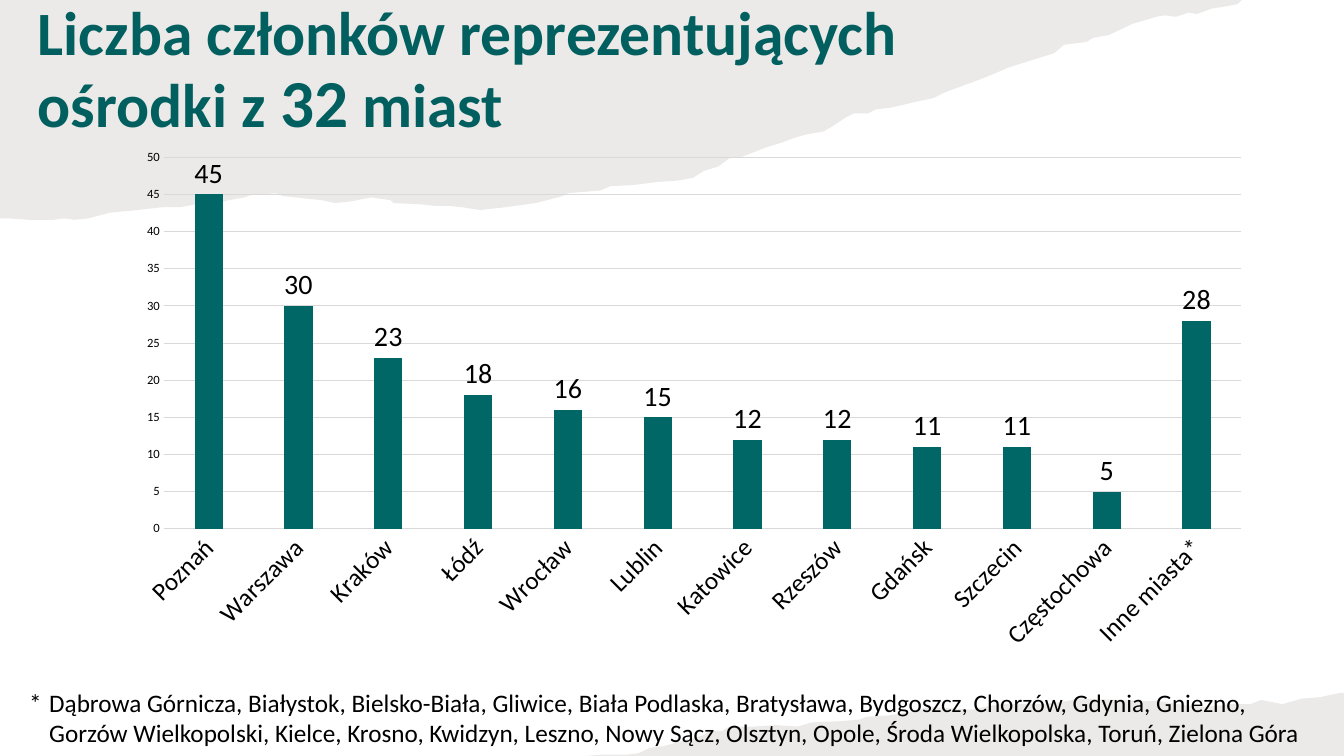
from dataclasses import dataclass

from lxml import etree
from pptx import Presentation
from pptx import util as u
from pptx.chart.data import CategoryChartData
from pptx.dml.color import RGBColor
from pptx.enum import chart as ch
from pptx.enum import text
from pptx.oxml import parse_xml
from pptx.oxml.ns import nsdecls, qn

TITLE_TEAL = RGBColor(0x01, 0x5F, 0x5F)
BAR_TEAL = RGBColor(0x00, 0x66, 0x66)
BLACK = RGBColor(0, 0, 0)
GRID_GREY = RGBColor(0xD9, 0xD9, 0xD9)
PAPER = RGBColor(0x82, 0x76, 0x6A)
FONT = "Calibri"
PAPER_OPACITY = 15  # per cent

MEMBERS = {
    "Poznań": 45, "Warszawa": 30, "Kraków": 23, "Łódź": 18,
    "Wrocław": 16, "Lublin": 15, "Katowice": 12, "Rzeszów": 12,
    "Gdańsk": 11, "Szczecin": 11, "Częstochowa": 5, "Inne miasta*": 28,
}
OTHER_CITIES = (
    "*\tDąbrowa Górnicza, Białystok, Bielsko-Biała, Gliwice, Biała Podlaska, "
    "Bratysława, Bydgoszcz, Chorzów, Gdynia, Gniezno, Gorzów Wielkopolski, "
    "Kielce, Krosno, Kwidzyn, Leszno, Nowy Sącz, Olsztyn, Opole, "
    "Środa Wielkopolska, Toruń, Zielona Góra"
)


@dataclass(frozen=True)
class Box:
    left: float
    top: float
    width: float
    height: float

    def lengths(self) -> list[u.Length]:
        return [u.Pt(v) for v in (self.left, self.top, self.width, self.height)]


@dataclass(frozen=True)
class TornPaper:
    """A sheet with straight corners and one ragged edge, as (x, y) points."""
    corners: list[tuple[float, float]]
    edge: list[tuple[float, float]]


TOP_PAPER = TornPaper([(0, 0)], [
    (887, 0), (884, 3), (873, 5), (866, 6), (855, 10), (849, 9), (840, 12),
    (832, 11), (826, 12), (809, 17), (792, 25), (781, 27), (776, 30),
    (760, 32), (753, 38), (721, 48), (714, 51), (702, 56), (683, 63),
    (675, 66), (667, 70), (653, 73), (636, 77), (626, 78), (620, 81),
    (610, 81), (604, 84), (595, 90), (588, 94), (576, 96), (566, 99),
    (558, 102), (548, 105), (530, 112), (521, 113), (513, 119), (503, 122),
    (495, 127), (484, 129), (469, 130), (454, 132), (436, 133), (429, 136),
    (406, 138), (402, 140), (383, 145), (361, 148), (343, 150), (330, 148),
    (320, 147), (310, 147), (301, 146), (281, 145), (279, 143), (265, 141),
    (250, 144), (239, 145), (230, 143), (220, 142), (202, 140), (197, 138),
    (187, 139), (180, 139), (175, 141), (163, 143), (153, 146), (145, 145),
    (129, 148), (116, 148), (98, 150), (78, 152), (63, 156), (53, 157),
    (46, 156), (38, 157), (21, 157), (7, 156), (0, 156),
])
BOTTOM_PAPER = TornPaper([(960, 495), (960, 540)], [
    (418, 540), (431, 539), (448, 539), (456, 538), (465, 534), (474, 533),
    (485, 530), (503, 525), (507, 522), (516, 522), (521, 519), (538, 519),
    (554, 518), (570, 519), (580, 516), (603, 515), (614, 514), (619, 512),
    (635, 511), (649, 509), (655, 507), (664, 505), (694, 507), (703, 505),
    (715, 503), (734, 503), (744, 503), (755, 502), (772, 499), (799, 500),
    (829, 501), (848, 504), (862, 505), (871, 504), (878, 503), (893, 503),
    (901, 500), (916, 503), (930, 499), (943, 498), (957, 495),
])


def add_torn_paper(s, paper: TornPaper) -> None:
    start, *rest = [(u.Pt(x), u.Pt(y)) for x, y in paper.corners + paper.edge]
    builder = s.shapes.build_freeform(*start)
    builder.add_line_segments(rest, close=True)
    sp = builder.convert_to_shape()
    sp.shadow.inherit = False
    sp.line.fill.background()
    sp.fill.solid()
    sp.fill.fore_color.rgb = PAPER
    colour = sp.fill._xPr.find(qn("a:solidFill"))[0]
    etree.SubElement(colour, qn("a:alpha"), val=str(PAPER_OPACITY * 1000))


def style_font(font, size: float, color: RGBColor = BLACK, bold: bool = False) -> None:
    font.name = FONT
    font.size = u.Pt(size)
    font.color.rgb = color
    font.bold = bold


def add_text(s, box: Box, runs: list[tuple[str, float]], *, color: RGBColor = BLACK,
             bold: bool = False, anchor=text.MSO_ANCHOR.TOP, line_spacing: float = 1.0,
             space_before: float = 0, hanging: float = 0, right_inset: float = 7.2) -> None:
    """Add one paragraph made of (text, size) runs."""
    tf = s.shapes.add_textbox(*box.lengths()).text_frame
    tf.word_wrap = True
    tf.vertical_anchor = anchor
    tf.margin_right = u.Pt(right_inset)
    p = tf.paragraphs[0]
    p.line_spacing = line_spacing
    p.space_before = u.Pt(space_before)
    if hanging:
        p_pr = p._p.get_or_add_pPr()
        p_pr.set("marL", str(u.Pt(hanging)))
        p_pr.set("indent", str(-u.Pt(hanging)))
    for content, size in runs:
        r = p.add_run()
        r.text = content
        style_font(r.font, size, color, bold)


def set_plot_area(chart, x: float, y: float, w: float, h: float) -> None:
    """Fix the inner plot area as fractions of the chart."""
    plot_area = chart._chartSpace.chart.plotArea
    for old in plot_area.findall(qn("c:layout")):
        plot_area.remove(old)
    parts = "".join(f'<c:{tag} val="{val}"/>' for tag, val in (
        ("layoutTarget", "inner"), ("xMode", "edge"), ("yMode", "edge"),
        ("x", x), ("y", y), ("w", w), ("h", h)))
    plot_area.insert(0, parse_xml(
        f'<c:layout {nsdecls("c")}><c:manualLayout>{parts}</c:manualLayout></c:layout>'))


def style_line(line) -> None:
    line.color.rgb = GRID_GREY
    line.width = u.Pt(0.75)


def add_member_chart(s, box: Box) -> None:
    data = CategoryChartData()
    data.categories = list(MEMBERS)
    data.add_series("Series 1", list(MEMBERS.values()))
    chart = s.shapes.add_chart(
        ch.XL_CHART_TYPE.COLUMN_CLUSTERED, *box.lengths(), data).chart
    chart.has_legend = False
    chart.has_title = False
    style_font(chart.font, 10)
    set_plot_area(chart, 0.078, 0.017, 0.903, 0.699)

    cities, counts = chart.category_axis, chart.value_axis
    for axis, size in ((cities, 18), (counts, 9)):
        style_font(axis.tick_labels.font, size)
        axis.major_tick_mark = axis.minor_tick_mark = ch.XL_TICK_MARK.NONE
    style_line(cities.format.line)
    cities._element.find(qn("c:txPr")).find(qn("a:bodyPr")).set("rot", str(-45 * 60000))
    counts.format.line.fill.background()
    counts.minimum_scale, counts.maximum_scale, counts.major_unit = 0, 50, 5
    counts.has_major_gridlines = True
    style_line(counts.major_gridlines.format.line)

    plot = chart.plots[0]
    plot.gap_width, plot.overlap = 219, -27
    plot.vary_by_categories = False
    bars = plot.series[0]
    bars.format.fill.solid()
    bars.format.fill.fore_color.rgb = BAR_TEAL
    labels = bars.data_labels
    labels.show_value = True
    labels.position = ch.XL_LABEL_POSITION.OUTSIDE_END
    style_font(labels.font, 20)


def main() -> None:
    prs = Presentation()
    prs.slide_width, prs.slide_height = u.Pt(960), u.Pt(540)
    s = prs.slides.add_slide(prs.slide_layouts[6])
    add_torn_paper(s, TOP_PAPER)
    add_text(s, Box(20, 0, 706, 103),
             [("Liczba członków reprezentujących ośrodki z ", 44), ("32", 48), (" miast", 44)],
             color=TITLE_TEAL, bold=True, anchor=text.MSO_ANCHOR.MIDDLE, line_spacing=0.9)
    add_torn_paper(s, BOTTOM_PAPER)
    add_member_chart(s, Box(50.5, 106, 852.5, 379.5))
    add_text(s, Box(13.7, 487.5, 933, 52.5), [(OTHER_CITIES, 18)],
             space_before=10, hanging=14.4, right_inset=10)
    prs.save("out.pptx")


if __name__ == "__main__":
    main()
